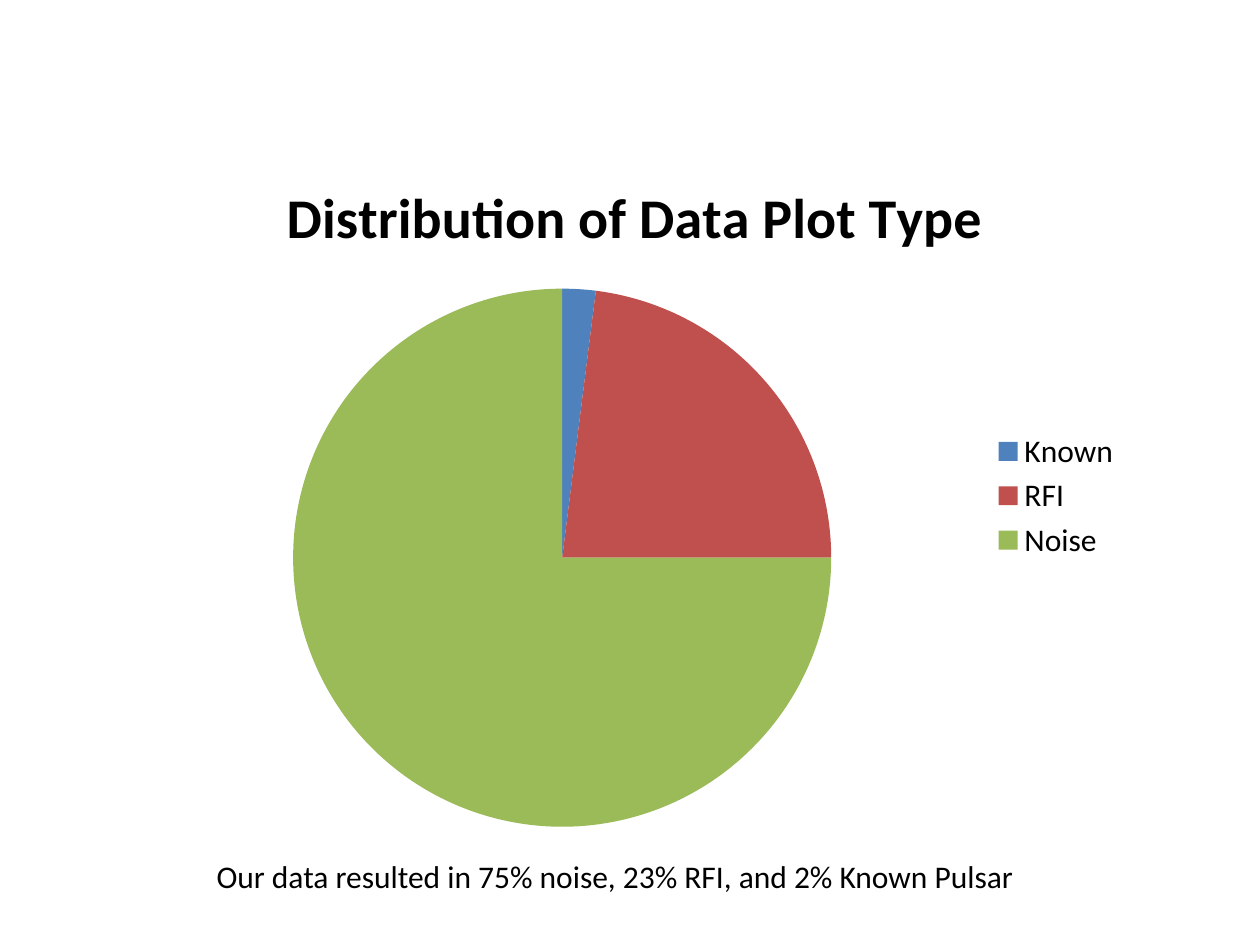
from pptx import Presentation
from pptx.chart.data import CategoryChartData
from pptx.dml.color import RGBColor
from pptx.enum.chart import XL_CHART_TYPE as ChartType, XL_LEGEND_POSITION as LegendPosition
from pptx.enum.text import MSO_AUTO_SIZE as AutoSize
from pptx.util import Inches, Pt

BLACK = RGBColor(0x00, 0x00, 0x00)
BLUE = RGBColor(0x4F, 0x81, 0xBD)
RED = RGBColor(0xC0, 0x50, 0x4D)
GREEN = RGBColor(0x9B, 0xBB, 0x59)


def style_font(font, size, bold=False):
    font.name = "Calibri"
    font.size = Pt(size)
    font.bold = bold
    font.color.rgb = BLACK


prs = Presentation()
prs.slide_width = Inches(10)
prs.slide_height = Inches(7.5)
slide = prs.slides.add_slide(prs.slide_layouts[6])

# Share of each plot type
plot_types = [("Known", 2, BLUE), ("RFI", 23, RED), ("Noise", 75, GREEN)]
distribution = CategoryChartData()
distribution.categories = [name for name, _, _ in plot_types]
distribution.add_series("Series 1", [share for _, share, _ in plot_types])

pie = slide.shapes.add_chart(
    ChartType.PIE, Inches(1.08), Inches(1.17), Inches(7.92), Inches(5.53), distribution
).chart
style_font(pie.font, 18)

pie.has_title = True
heading = pie.chart_title.text_frame
heading.text = "Distribution of Data Plot Type"
style_font(heading.paragraphs[0].runs[0].font, 32, bold=True)
pie.chart_title.include_in_layout = False

pie.has_legend = True
pie.legend.position = LegendPosition.RIGHT
pie.legend.include_in_layout = False

pie.plots[0].vary_by_categories = True
slices = pie.plots[0].series[0].points
for index, (_, _, color) in enumerate(plot_types):
    fill = slices[index].format.fill
    fill.solid()
    fill.fore_color.rgb = color

# Summary below the pie
summary = slide.shapes.add_textbox(
    Inches(1.62), Inches(6.75), Inches(6.58), Inches(0.4)
).text_frame
summary.word_wrap = True
summary.auto_size = AutoSize.SHAPE_TO_FIT_TEXT
summary.text = "Our data resulted in 75% noise, 23% RFI, and 2% Known Pulsar"
style_font(summary.paragraphs[0].runs[0].font, 18)

prs.save("out.pptx")
